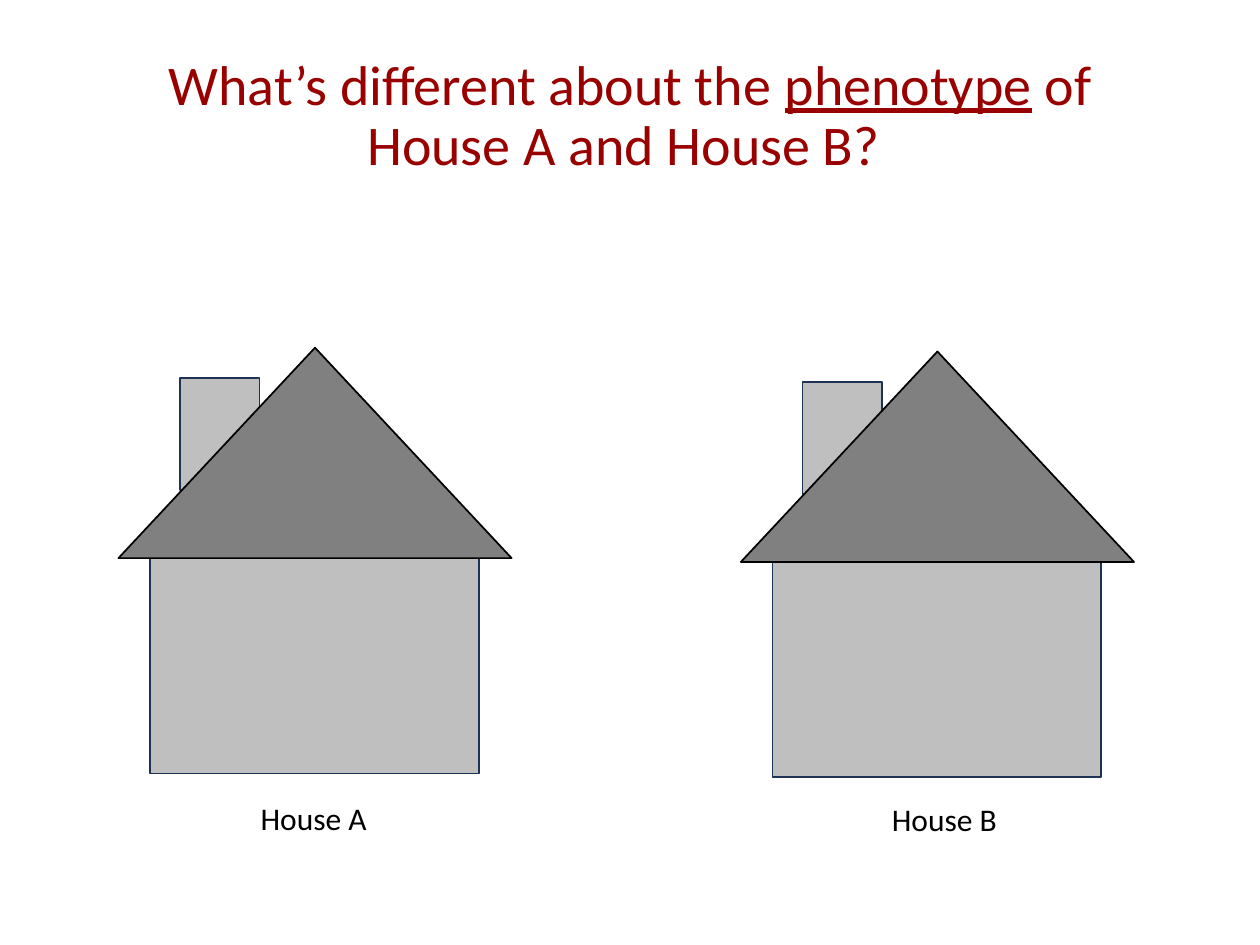
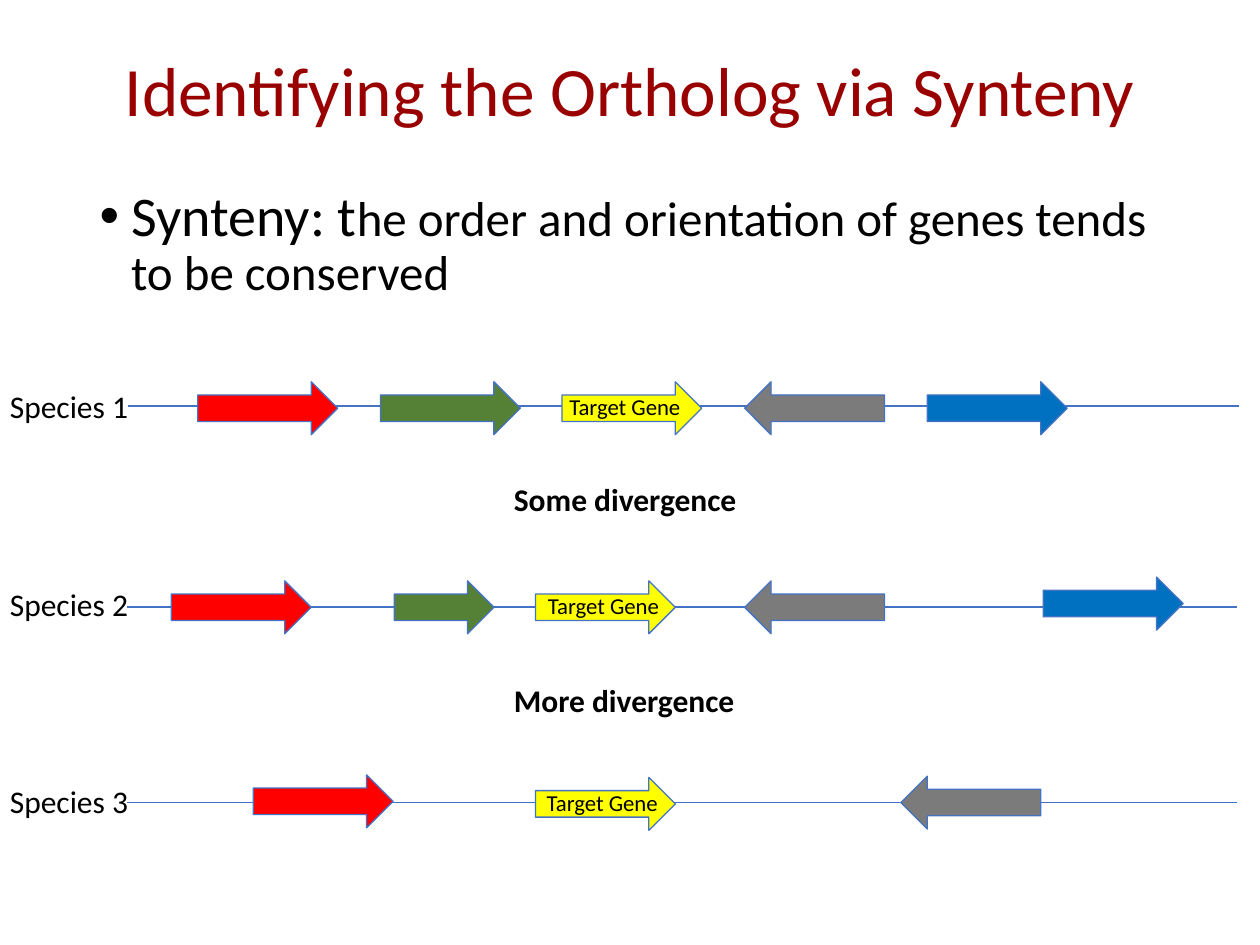
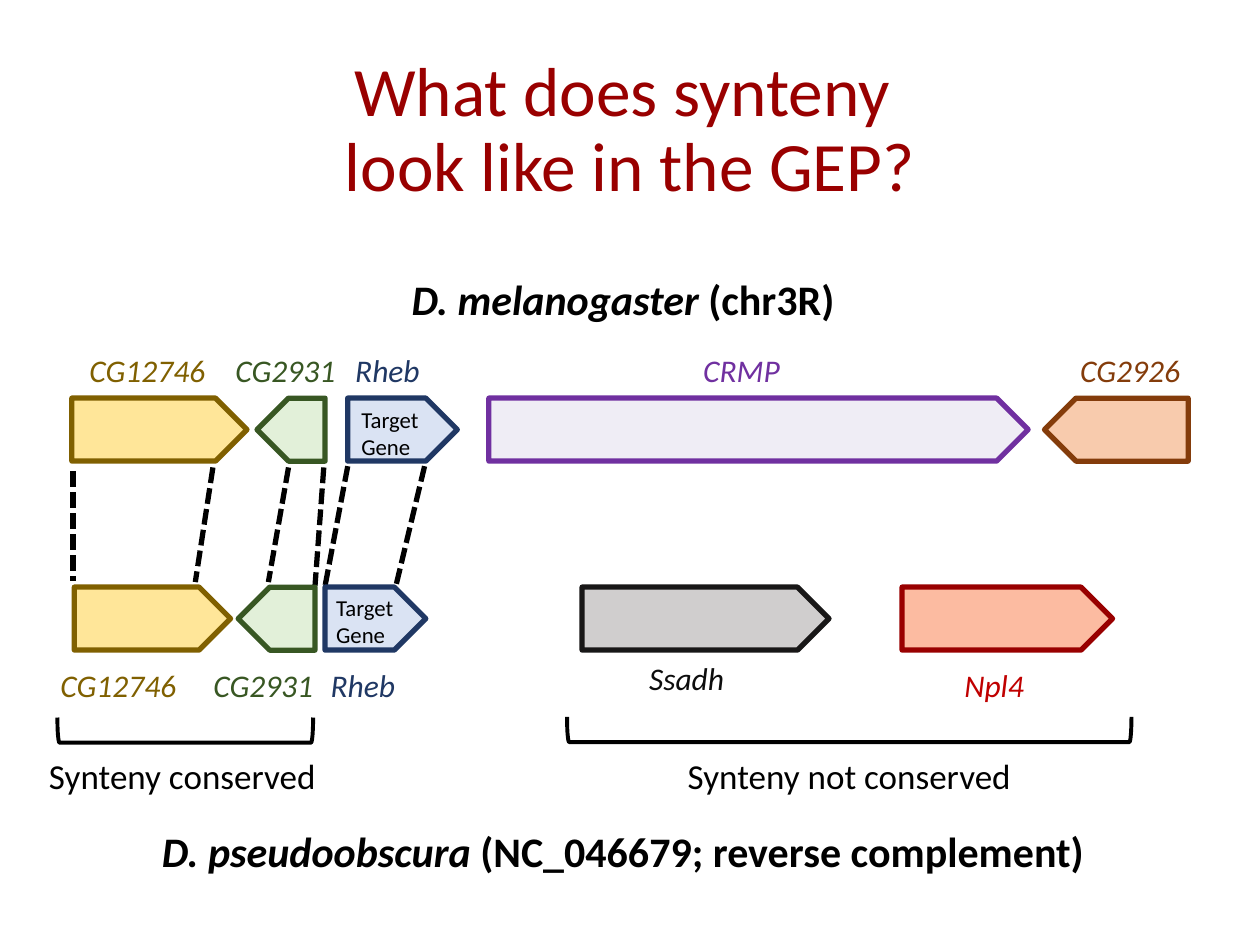
from lxml import etree
from pptx import Presentation
from pptx.dml.color import RGBColor
from pptx.enum.dml import MSO_LINE
from pptx.enum.shapes import MSO_CONNECTOR, MSO_SHAPE
from pptx.enum.text import MSO_ANCHOR, MSO_AUTO_SIZE, PP_ALIGN
from pptx.oxml.ns import qn
from pptx.util import Pt

PX = 9144  # 100 px to the inch
FONT = "Calibri"
LEFT, CENTER = PP_ALIGN.LEFT, PP_ALIGN.CENTER
RECTANGLE, TRIANGLE = MSO_SHAPE.RECTANGLE, MSO_SHAPE.ISOSCELES_TRIANGLE
RIGHT_ARROW, LEFT_ARROW = MSO_SHAPE.RIGHT_ARROW, MSO_SHAPE.LEFT_ARROW
GENE_PLATE, BRACKET = MSO_SHAPE.PENTAGON, MSO_SHAPE.RIGHT_BRACKET
SHORT_DASH = MSO_LINE.SQUARE_DOT

COLORS = {
    "title": "990000", "text": "000000",
    "wall": "BFBFBF", "wall line": "1E3256", "roof": "808080",
    "strand": "4472C4", "red": "FF0000", "green": "548135",
    "target": "FFFF00", "gray": "7B7B7B", "blue": "0070C0",
    "CG12746": "806000", "CG12746 fill": "FFE699",
    "CG2931": "385723", "CG2931 fill": "E2F0D9",
    "Rheb": "203864", "Rheb fill": "DAE3F3",
    "CRMP": "7030A0", "CRMP fill": "EFEDF5",
    "CG2926": "843C0B", "CG2926 fill": "F8CBAD",
    "Ssadh": "181717", "Ssadh fill": "D0CECE", "Ssadh label": "0D0D0D",
    "Npl4": "990000", "Npl4 fill": "FCBBA1", "Npl4 label": "C00000",
}


def add_outlined(shapes, kind, box, fill, line, width, rotation=0):
    """Add a preset shape; a fill of None leaves it hollow."""
    shape = shapes.add_shape(kind, *[value * PX for value in box])
    shape.shadow.inherit = False
    shape.rotation = rotation
    if fill:
        shape.fill.solid()
        shape.fill.fore_color.rgb = RGBColor.from_string(COLORS[fill])
    else:
        shape.fill.background()
    shape.line.color.rgb = RGBColor.from_string(COLORS[line])
    shape.line.width = Pt(width)


def add_label(slide, box, runs, size, color="text", align=LEFT, inset=5, wrap=True):
    """Add a text box; runs are (text, bold, italic)."""
    frame = slide.shapes.add_textbox(*[value * PX for value in box]).text_frame
    frame.word_wrap = wrap
    frame.margin_top = frame.margin_bottom = inset * PX
    paragraph = frame.paragraphs[0]
    paragraph.alignment = align
    for text, bold, italic in runs:
        run = paragraph.add_run()
        run.text = text
        run.font.name = FONT
        run.font.size = Pt(size)
        run.font.bold = bold
        run.font.italic = italic
        run.font.color.rgb = RGBColor.from_string(COLORS[color])


presentation = Presentation()
presentation.slide_width = 1000 * PX
presentation.slide_height = 750 * PX

# Titles: layout number, size, lines of (text, underlined) runs
titles = [
    (5, 32, [[("What’s different about the ", False), ("phenotype", True),
              (" of House A and House B? ", False)]]),
    (1, 39.6, [[("Identifying the Ortholog via Synteny", False)]]),
    (5, 39.6, [[("What does synteny ", False)], [("look like in the GEP?", False)]]),
]
for layout, size, lines in titles:
    slide = presentation.slides.add_slide(presentation.slide_layouts[layout])
    title = slide.shapes.title
    title.left, title.top, title.width, title.height = [v * PX for v in (69, 40, 862, 85)]
    frame = title.text_frame
    frame.auto_size = MSO_AUTO_SIZE.NONE
    frame.vertical_anchor = MSO_ANCHOR.TOP
    paragraph = frame.paragraphs[0]
    paragraph.alignment = CENTER
    paragraph.line_spacing = 0.9
    paragraph.space_before = Pt(0)
    paragraph.font.size = Pt(size)
    for number, line in enumerate(lines):
        if number:
            paragraph.add_line_break()
        for text, underlined in line:
            run = paragraph.add_run()
            run.text = text
            run.font.name = FONT
            run.font.size = Pt(size)
            run.font.underline = underlined
            run.font.color.rgb = RGBColor.from_string(COLORS["title"])
houses_slide, ortholog_slide, gep_slide = presentation.slides

# Lines that lie behind the genes: strands, and links between matching genes
strands = [(102, 322, 983, 322), (101, 482, 982, 482), (101, 637, 982, 637)]
links = [(58, 374, 58, 461), (169, 371, 155, 462), (229, 371, 213, 462),
         (257, 371, 250, 465), (276, 370, 258, 465), (337, 370, 314, 466)]
for slide, ends_list, color, width, dash in [
    (ortholog_slide, strands, "strand", 1, None),
    (gep_slide, links, "text", 3, SHORT_DASH),
]:
    for ends in ends_list:
        connector = slide.shapes.add_connector(
            MSO_CONNECTOR.STRAIGHT, *[value * PX for value in ends])
        connector.line.color.rgb = RGBColor.from_string(COLORS[color])
        connector.line.width = Pt(width)
        connector.line.dash_style = dash
        properties = connector._element.find(qn("p:spPr"))
        etree.SubElement(properties, qn("a:effectLst"))

# Slide 1: two houses
for name, x, y, label_x, label_y in [
    ("House A", 94, 276, 197, 629), ("House B", 588, 279, 698, 630),
]:
    house = houses_slide.shapes.add_group_shape().shapes
    add_outlined(house, RECTANGLE, (x + 49, y + 24, 63, 89), "wall", "wall line", 1)
    add_outlined(house, RECTANGLE, (x + 25, y + 167, 261, 171), "wall", "wall line", 1)
    add_outlined(house, TRIANGLE, (x, y, 312, 167), "roof", "text", 1)
    add_label(houses_slide, (label_x, label_y, 105, 40), [(name, False, False)], 18,
              wrap=False)

# Slide 2: gene order in three species
body = ortholog_slide.placeholders[1]
body.left, body.top, body.width, body.height = [v * PX for v in (69, 144, 862, 506)]
body.text_frame.auto_size = MSO_AUTO_SIZE.NONE
paragraph = body.text_frame.paragraphs[0]
paragraph.line_spacing = 0.9
paragraph.space_before = Pt(0)
indents = paragraph._p.get_or_add_pPr()
indents.set("marL", str(25 * PX))
indents.set("indent", str(-25 * PX))
for text, size in [
    ("Synteny: t", 32),
    ("he order and orientation of genes tends to be conserved", 28),
]:
    run = paragraph.add_run()
    run.text = text
    run.font.name = FONT
    run.font.size = Pt(size)
    run.font.color.rgb = RGBColor.from_string(COLORS["text"])

# Species: label top, target label place, genes as (color, left, top, width)
species = [
    ("Species 1", 302, (442, 302), [
        ("red", 157, 303, 111), ("green", 302, 303, 111), ("target", 446, 303, 111),
        ("gray", 591, 303, 111), ("blue", 736, 303, 111)]),
    ("Species 2", 459, (425, 460), [
        ("red", 136, 461, 111), ("green", 313, 461, 79), ("target", 425, 461, 111),
        ("gray", 591, 461, 111), ("blue", 828, 458, 111)]),
    ("Species 3", 616, (424, 616), [
        ("red", 201, 615, 111), ("target", 425, 617, 111), ("gray", 715, 616, 111)]),
]
for name, label_top, target_place, genes in species:
    for color, left, top, width in genes:
        arrow = LEFT_ARROW if color == "gray" else RIGHT_ARROW
        add_outlined(ortholog_slide.shapes, arrow, (left, top, width, 42),
                     color, "strand", 0.75)
    add_label(ortholog_slide, (-2, label_top, 115, 40), [(name, False, False)], 18)
    add_label(ortholog_slide, (*target_place, 133, 42), [("Target Gene", False, False)],
              13, inset=10)
for text, top, width in [("Some divergence", 376, 208), ("More divergence", 536, 232)]:
    add_label(ortholog_slide, (398, top, width, 40), [(text, True, False)], 18)

# Slide 3: genes as (name, left, width, turn, label left, label top, label width)
gene_rows = [
    (316, [("CG12746", 57, 139, 0, 55, 274, 124), ("CG2931", 204, 54, 180, 172, 274, 109),
           ("Rheb", 276, 87, 0, 268, 274, 79), ("CRMP", 388, 428, 0, 388, 274, 401),
           ("CG2926", 829, 114, 180, 829, 274, 136)]),
    (466, [("CG12746", 59, 124, 0, 32, 524, 124), ("CG2931", 189, 61, 180, 147, 524, 124),
           ("Rheb", 258, 80, 0, 239, 524, 98), ("Ssadh", 462, 196, 0, 483, 518, 124),
           ("Npl4", 716, 167, 0, 727, 524, 124)]),
]
for top, genes in gene_rows:
    for name, left, width, turn, label_left, label_top, label_width in genes:
        add_outlined(gep_slide.shapes, GENE_PLATE, (left, top, width, 50),
                     name + " fill", name, 3, turn)
        label_color = name + " label" if name + " label" in COLORS else name
        add_label(gep_slide, (label_left, label_top, label_width, 40),
                  [(name, False, True)], 18, label_color, CENTER)
for box in [(277, 312, 83, 64), (257, 461, 73, 64)]:
    add_label(gep_slide, box, [("Target Gene", False, False)], 13, inset=10)

for name, detail, top in [
    ("D. melanogaster", " (chr3R)", 212),
    ("D. pseudoobscura", " (NC_046679; reverse complement)", 650),
]:
    add_label(gep_slide, (46, top, 897, 50), [(name, True, True), (detail, True, False)],
              24, align=CENTER)

for text, bracket, left, width, align in [
    ("Synteny conserved", (137, 478, 20, 203), 29, 239, LEFT),
    ("Synteny not conserved", (664, 355, 20, 448), 450, 448, CENTER),
]:
    add_outlined(gep_slide.shapes, BRACKET, bracket, None, "text", 2.25, 90)
    add_label(gep_slide, (left, 589, width, 54), [(text, False, False)], 20,
              align=align, inset=10)

presentation.save("out.pptx")
